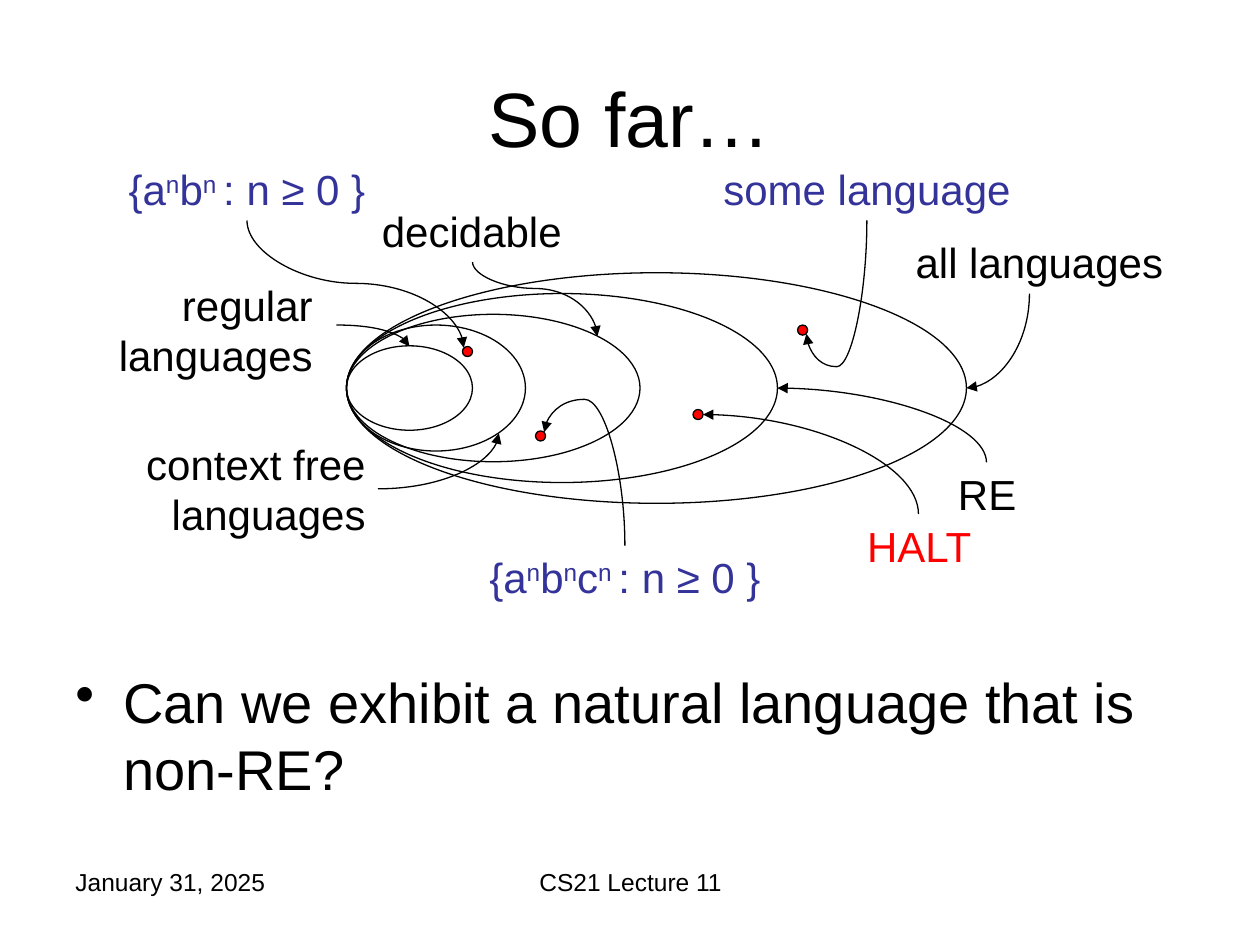
from lxml import etree
from pptx import Presentation
from pptx.dml.color import RGBColor
from pptx.enum.shapes import MSO_CONNECTOR, MSO_SHAPE
from pptx.enum.text import MSO_ANCHOR, PP_ALIGN
from pptx.oxml.ns import qn
from pptx.util import Inches, Pt

LEFT, CENTER, RIGHT = PP_ALIGN.LEFT, PP_ALIGN.CENTER, PP_ALIGN.RIGHT
TOP, MIDDLE = MSO_ANCHOR.TOP, MSO_ANCHOR.MIDDLE
OVAL, CURVE = MSO_SHAPE.OVAL, MSO_CONNECTOR.CURVE

COLORS = {"black": "000000", "blue": "333399", "red": "FF0000"}
FONT = "Arial"
LINE_WIDTH = Pt(0.75)

# Text between carets is superscript: text, (left, top, width, height), format
TEXTS = [
    ("January 31, 2025", (0.5, 6.83, 2.33, 0.52), {"size": 14}),
    ("CS21 Lecture 11", (3.42, 6.83, 3.17, 0.52), {"size": 14, "align": CENTER}),
    ("So far…", (0.5, 0.3, 9, 1.25), {"size": 44, "align": CENTER, "anchor": MIDDLE}),
    ("Can we exhibit a natural language that is non-RE?", (0.5, 5.25, 9, 1.45),
     {"size": 32, "bullet": "•"}),
    ("regular languages", (0.75, 2.17, 1.83, 0.9), {"align": RIGHT}),
    ("context free languages", (0.67, 3.43, 2.33, 0.9), {"align": RIGHT}),
    ("all languages", (7, 1.83, 2.33, 0.5), {"align": RIGHT}),
    ("decidable", (2.58, 1.58, 2.33, 0.5), {"align": CENTER}),
    ("RE", (6.67, 3.67, 2.33, 0.5), {"align": CENTER}),
    ("HALT", (6.67, 4.08, 1.25, 0.5), {"align": CENTER, "color": "red"}),
    ("{a^n^b^n ^: n ≥ 0 }", (0.5, 1.25, 2.92, 0.5), {"align": CENTER, "color": "blue"}),
    ("{a^n^b^n^c^n ^: n ≥ 0 }", (3.5, 4.33, 2.92, 0.5), {"align": CENTER, "color": "blue"}),
    ("some language", (5.42, 1.25, 2.92, 0.5), {"align": CENTER, "color": "blue"}),
]

# Nested language classes share their left end and middle height: width, height
CLASSES_LEFT, CLASSES_MIDDLE = 2.75, 3.08
CLASSES = [(4.92, 1.83), (3.42, 1.5), (2.33, 1.17), (1.42, 1), (1, 0.67)]

# Example languages: left, top
DOT_SIZE = 0.08
DOTS = [(3.67, 2.75), (4.25, 3.42), (6.33, 2.58), (5.5, 3.25)]

# Arrows: start, end, whether the start is vertical, bend position of an S curve
ARROWS = [
    ((2.67, 2.58), (3.25, 2.75), False, None),  # regular
    ((3, 3.88), (3.96, 3.44), False, None),     # context free
    ((8.17, 2.33), (7.67, 3.08), True, None),   # all languages
    ((7.83, 3.67), (6.17, 3.08), True, None),   # RE
    ((7.29, 4.08), (5.58, 3.29), True, None),   # HALT
    ((3.75, 2.08), (4.74, 2.67), True, 0.355),  # decidable
    ((1.96, 1.75), (3.68, 2.76), True, 0.494),  # a^n b^n
    ((4.96, 4.33), (4.32, 3.43), True, 1.29),   # a^n b^n c^n
    ((6.88, 1.75), (6.4, 2.65), True, 1.29),    # some language
]


def rgb(name):
    return RGBColor.from_string(COLORS[name])


def add_text(page, text, place, size=24, color="black", align=LEFT, anchor=TOP, bullet=None):
    box = page.shapes.add_textbox(*map(Inches, place))
    frame = box.text_frame
    frame.word_wrap = True
    frame.vertical_anchor = anchor
    para = frame.paragraphs[0]
    para.alignment = align
    if bullet:
        properties = para._p.get_or_add_pPr()
        properties.set("marL", str(Inches(0.38)))
        properties.set("indent", str(-Inches(0.38)))
        etree.SubElement(properties, qn("a:buChar")).set("char", bullet)
    for index, part in enumerate(text.split("^")):
        span = para.add_run()
        span.text = part
        span.font.name = FONT
        span.font.size = Pt(size)
        span.font.color.rgb = rgb(color)
        if index % 2:
            span._r.get_or_add_rPr().set("baseline", "30000")


def add_ellipse(page, left, top, width, height, fill=None):
    shape = page.shapes.add_shape(OVAL, *map(Inches, (left, top, width, height)))
    shape.shadow.inherit = False
    if fill:
        shape.fill.solid()
        shape.fill.fore_color.rgb = rgb(fill)
    else:
        shape.fill.background()
    shape.line.color.rgb = rgb("black")
    shape.line.width = LINE_WIDTH


def add_arrow(page, start, end, vertical, bend):
    (x1, y1), (x2, y2) = start, end
    dx, dy = x2 - x1, y2 - y1
    if vertical:
        # The unturned frame has the same centre, with its sides swapped
        middle_x, middle_y = (x1 + x2) / 2, (y1 + y2) / 2
        half_width, half_height = abs(dy) / 2, abs(dx) / 2
        x1, x2 = middle_x - half_width, middle_x + half_width
        y1, y2 = middle_y - half_height, middle_y + half_height
        if dx * dy > 0:
            x1, x2 = x2, x1
    arrow = page.shapes.add_connector(CURVE, *map(Inches, (x1, y1, x2, y2)))
    arrow.line.color.rgb = rgb("black")
    arrow.line.width = LINE_WIDTH
    properties = arrow._element.spPr
    if vertical:
        degrees = 90 if dx < 0 else 270
        properties.find(qn("a:xfrm")).set("rot", str(degrees * 60000))
    geometry = properties.find(qn("a:prstGeom"))
    if bend is None:
        geometry.set("prst", "curvedConnector2")
    else:
        guide = etree.SubElement(geometry.find(qn("a:avLst")), qn("a:gd"))
        guide.set("name", "adj1")
        guide.set("fmla", f"val {round(bend * 100000)}")
    etree.SubElement(properties.find(qn("a:ln")), qn("a:tailEnd")).set("type", "triangle")
    etree.SubElement(properties, qn("a:effectLst"))


def main():
    deck = Presentation()
    deck.slide_width, deck.slide_height = Inches(10), Inches(7.5)
    page = deck.slides.add_slide(deck.slide_layouts[6])
    for width, height in CLASSES:
        add_ellipse(page, CLASSES_LEFT, CLASSES_MIDDLE - height / 2, width, height)
    for text, place, style in TEXTS:
        add_text(page, text, place, **style)
    for arrow in ARROWS:
        add_arrow(page, *arrow)
    for left, top in DOTS:
        add_ellipse(page, left, top, DOT_SIZE, DOT_SIZE, fill="red")
    deck.save("out.pptx")


if __name__ == "__main__":
    main()
